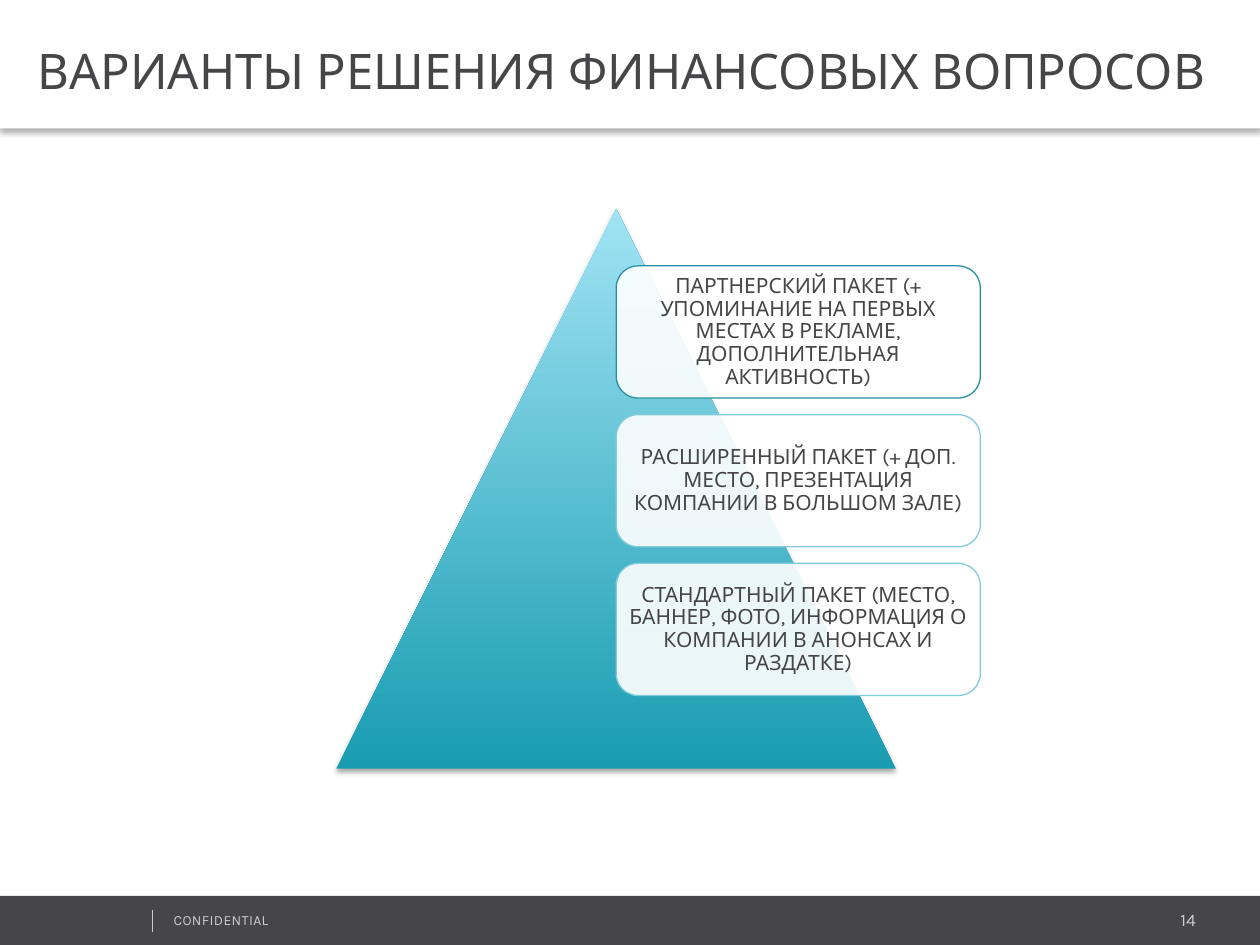
from dataclasses import dataclass

from lxml.etree import SubElement
from pptx import Presentation
from pptx.dml.color import RGBColor
from pptx.enum.shapes import MSO_CONNECTOR as Connector, MSO_SHAPE as Shape
from pptx.enum.text import MSO_ANCHOR as Anchor, MSO_AUTO_SIZE as AutoSize, PP_ALIGN as Align
from pptx.oxml.ns import qn
from pptx.util import Inches, Pt


@dataclass(frozen=True)
class Theme:
    font: str = "Karla"
    dark: str = "464547"
    white: str = "FFFFFF"
    muted: str = "CCCCCC"
    pyramid_base: str = "199CB1"
    pyramid_top: str = "A0E3F4"
    strong_border: str = "2A909F"
    soft_border: str = "82CBDA"
    title_size: float = 28
    package_size: float = 12
    number_size: float = 10
    footer_size: float = 8


@dataclass(frozen=True)
class Box:
    left: float
    top: float
    width: float
    height: float

    def inner(self, x, y, width, height):
        """A box inside this one, given as shares of its size."""
        return Box(self.left + x * self.width, self.top + y * self.height,
                   width * self.width, height * self.height)

    def lengths(self):
        return [Inches(value) for value in (self.left, self.top, self.width, self.height)]


THEME = Theme()
PAGE = Box(0, 0, 10, 7.5)
PACKAGES = [
    ("ПАРТНЕРСКИЙ ПАКЕТ (+ УПОМИНАНИЕ НА ПЕРВЫХ МЕСТАХ В РЕКЛАМЕ, "
     "ДОПОЛНИТЕЛЬНАЯ АКТИВНОСТЬ)", THEME.strong_border),
    ("РАСШИРЕННЫЙ ПАКЕТ (+ ДОП. МЕСТО, ПРЕЗЕНТАЦИЯ КОМПАНИИ В БОЛЬШОМ ЗАЛЕ)",
     THEME.soft_border),
    ("СТАНДАРТНЫЙ ПАКЕТ (МЕСТО, БАННЕР, ФОТО, ИНФОРМАЦИЯ О КОМПАНИИ В АНОНСАХ И РАЗДАТКЕ)",
     THEME.soft_border),
]


def rgb(value):
    return RGBColor.from_string(value)


def fill_solid(shape, color):
    shape.fill.solid()
    shape.fill.fore_color.rgb = rgb(color)


def add_shadow(shape, opacity, blur, distance):
    """Soft black shadow cast straight down."""
    effects = SubElement(shape._element.spPr, qn("a:effectLst"))
    shadow = SubElement(effects, qn("a:outerShdw"), blurRad=str(Pt(blur)),
                        dist=str(Pt(distance)), dir="5400000", algn="t", rotWithShape="0")
    color = SubElement(shadow, qn("a:srgbClr"), val="000000")
    SubElement(color, qn("a:alpha"), val=str(opacity * 1000))


def set_text(shape, text, size, color, align=Align.LEFT, spacing=1.0, margins=(0.1, 0.05)):
    frame = shape.text_frame
    frame.text = text
    frame.word_wrap = True
    frame.auto_size = AutoSize.NONE
    frame.vertical_anchor = Anchor.MIDDLE
    frame.margin_left = frame.margin_right = Inches(margins[0])
    frame.margin_top = frame.margin_bottom = Inches(margins[1])
    paragraph = frame.paragraphs[0]
    paragraph.alignment = align
    paragraph.line_spacing = spacing
    paragraph.space_before = Pt(0)
    run = paragraph.runs[0]
    run.font.name, run.font.size = THEME.font, Pt(size)
    run.font.color.rgb = rgb(color)
    return run


def add_title(slide, box):
    title = slide.shapes.title
    title.left, title.top, title.width, title.height = box.lengths()
    fill_solid(title, THEME.white)
    add_shadow(title, 30, 3.1, 2)
    set_text(title, "ВАРИАНТЫ РЕШЕНИЯ ФИНАНСОВЫХ ВОПРОСОВ", THEME.title_size, THEME.dark,
             spacing=1.2, margins=(0.3, 0.04))
    title.text_frame.margin_right = Inches(0.07)


def add_pyramid(slide, box):
    pyramid = slide.shapes.add_shape(Shape.ISOSCELES_TRIANGLE, *box.lengths())
    pyramid.fill.gradient()
    pyramid.fill.gradient_angle = 90
    for stop, color in zip(pyramid.fill.gradient_stops,
                           (THEME.pyramid_base, THEME.pyramid_top)):
        stop.color.rgb = rgb(color)
    pyramid.line.fill.background()
    add_shadow(pyramid, 35, 3.1, 1.8)


def add_packages(slide, box):
    """Stack of equal cards, each gap an eighth of a card's height."""
    count = len(PACKAGES)
    card_height = 1 / (count + (count - 1) / 8)
    for row, (text, border) in enumerate(PACKAGES):
        place = box.inner(0, row * card_height * 9 / 8, 1, card_height)
        card = slide.shapes.add_shape(Shape.ROUNDED_RECTANGLE, *place.lengths())
        card.shadow.inherit = False
        fill_solid(card, THEME.white)
        color = card._element.spPr.find(qn("a:solidFill"))[0]
        SubElement(color, qn("a:alpha"), val="90000")
        card.line.color.rgb = rgb(border)
        card.line.width = Pt(0.75)
        set_text(card, text, THEME.package_size, THEME.dark, Align.CENTER,
                 spacing=0.9, margins=(0.05, 0.05))


def add_footer(slide, box):
    bar = slide.shapes.add_shape(Shape.RECTANGLE, *box.lengths())
    bar.shadow.inherit = False
    fill_solid(bar, THEME.dark)
    bar.line.fill.background()

    # Divider
    mark = box.inner(0.121, 0.28, 0, 0.45)
    left, top, width, height = mark.lengths()
    divider = slide.shapes.add_connector(Connector.STRAIGHT, left, top, left + width, top + height)
    divider.line.color.rgb = rgb(THEME.muted)
    divider.line.width = Pt(0.25)
    SubElement(divider._element.spPr, qn("a:effectLst"))

    # Confidentiality label and page number
    label = slide.shapes.add_textbox(*box.inner(0.128, 0.18, 0.253, 0.6).lengths())
    run = set_text(label, "CONFIDENTIAL", THEME.footer_size, THEME.muted)
    run._r.get_or_add_rPr().set("spc", "20")
    number = slide.shapes.add_textbox(*box.inner(0.796, 0.15, 0.163, 0.68).lengths())
    set_text(number, "14", THEME.number_size, THEME.muted, Align.RIGHT)


def main():
    presentation = Presentation()
    presentation.slide_width, presentation.slide_height = Inches(PAGE.width), Inches(PAGE.height)
    slide = presentation.slides.add_slide(presentation.slide_layouts[5])
    add_footer(slide, Box(0, 7.11, PAGE.width, 0.39))
    add_title(slide, Box(0, 0, PAGE.width, 1.02))
    add_pyramid(slide, Box(2.67, 1.66, 4.44, 4.44))
    add_packages(slide, Box(4.89, 2.11, 2.89, 3.41))
    presentation.save("out.pptx")


if __name__ == "__main__":
    main()
